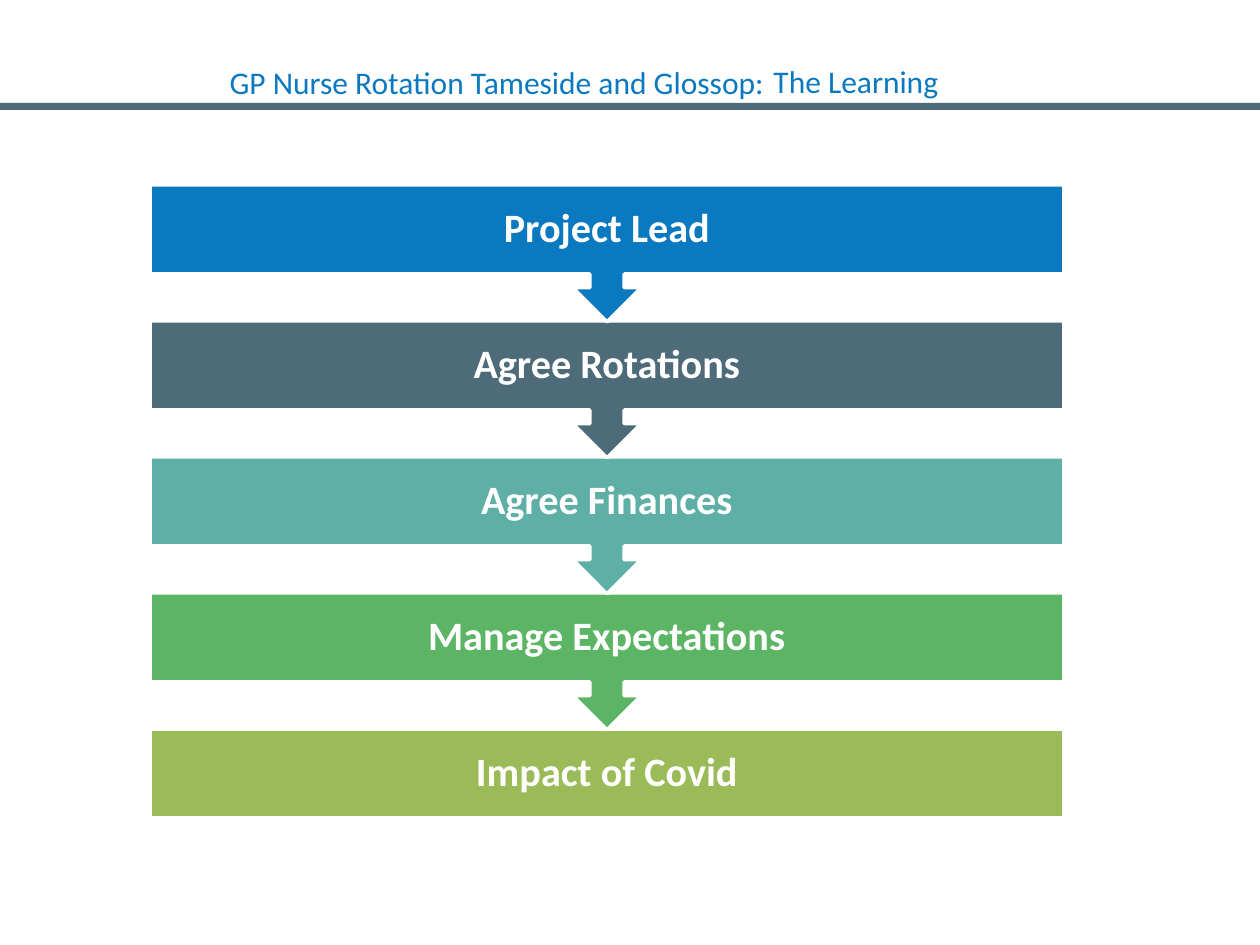
from dataclasses import dataclass

from pptx import Presentation
from pptx.dml.color import RGBColor
from pptx.enum.shapes import MSO_SHAPE
from pptx.enum.text import MSO_ANCHOR, PP_ALIGN
from pptx.shapes.autoshape import Shape
from pptx.slide import Slide
from pptx.text.text import TextFrame
from pptx.util import Emu, Pt

PX_PER_INCH = 126
TITLE_ONLY_LAYOUT = 5


@dataclass(frozen=True)
class Theme:
    font: str = "Calibri"
    blue: str = "0A79C0"
    slate: str = "4E6B79"
    teal: str = "5EAFA6"
    green: str = "5CB565"
    olive: str = "9BBB59"
    white: str = "FFFFFF"
    heading_size: int = 18
    step_size: int = 23
    outline: int = 2


@dataclass(frozen=True)
class Box:
    left: int
    top: int
    width: int
    height: int

    def emu(self) -> tuple[Emu, ...]:
        return tuple(px(n) for n in (self.left, self.top, self.width, self.height))


@dataclass(frozen=True)
class Step:
    label: str
    color: str


THEME = Theme()
STEPS = (
    Step("Project Lead", THEME.blue),
    Step("Agree Rotations", THEME.slate),
    Step("Agree Finances", THEME.teal),
    Step("Manage Expectations", THEME.green),
    Step("Impact of Covid", THEME.olive),
)
STEP_LEFT, STEP_TOP, STEP_WIDTH = 150, 185, 914
STEP_PITCH = 136
CALLOUT_HEIGHT, BAR_HEIGHT = 137, 89
STEP_INSET = 23


def px(length: int) -> Emu:
    return Emu(round(length * 914400 / PX_PER_INCH))


def write_text(frame: TextFrame, text: str, *, size: int, color: str,
               bold: bool = False, align: PP_ALIGN = PP_ALIGN.LEFT,
               anchor: MSO_ANCHOR = MSO_ANCHOR.TOP, wrap: bool = False,
               spacing: float = 1.0) -> None:
    frame.word_wrap = wrap
    frame.vertical_anchor = anchor
    para = frame.paragraphs[0]
    para.alignment = align
    para.line_spacing = spacing
    para.space_before = Pt(0)
    span = para.add_run()
    span.text = text
    span.font.name = THEME.font
    span.font.size = Pt(size)
    span.font.bold = bold
    span.font.color.rgb = RGBColor.from_string(color)


def add_filled_shape(page: Slide, kind: MSO_SHAPE, box: Box, color: str) -> Shape:
    shape = page.shapes.add_shape(kind, *box.emu())
    shape.shadow.inherit = False
    shape.fill.solid()
    shape.fill.fore_color.rgb = RGBColor.from_string(color)
    shape.line.fill.background()
    return shape


def add_heading(page: Slide) -> None:
    """Fill the title and put its second part beside it."""
    title = page.shapes.title
    title.left, title.top, title.width, title.height = Box(217, 57, 566, 51).emu()
    subject = page.shapes.add_textbox(*Box(761, 56, 193, 51).emu())
    for shape, text in (
        (title, "GP Nurse Rotation Tameside and Glossop:"),
        (subject, "The Learning"),
    ):
        write_text(shape.text_frame, text, size=THEME.heading_size, color=THEME.blue)


def add_step(page: Slide, index: int, step: Step) -> None:
    """Draw a bar that points down to the next one, unless it is the last."""
    is_last = index == len(STEPS) - 1
    kind = MSO_SHAPE.RECTANGLE if is_last else MSO_SHAPE.DOWN_ARROW_CALLOUT
    height = BAR_HEIGHT if is_last else CALLOUT_HEIGHT
    box = Box(STEP_LEFT, STEP_TOP + index * STEP_PITCH, STEP_WIDTH, height)
    bar = add_filled_shape(page, kind, box, step.color)
    bar.line.color.rgb = RGBColor.from_string(THEME.white)
    bar.line.width = Pt(THEME.outline)
    frame = bar.text_frame
    frame.margin_left = frame.margin_right = px(STEP_INSET)
    frame.margin_top = frame.margin_bottom = px(STEP_INSET)
    write_text(frame, step.label, size=THEME.step_size, color=THEME.white,
               bold=True, align=PP_ALIGN.CENTER, anchor=MSO_ANCHOR.MIDDLE,
               wrap=True, spacing=0.9)


def main() -> None:
    deck = Presentation()
    deck.slide_width, deck.slide_height = px(1260), px(945)
    page = deck.slides.add_slide(deck.slide_layouts[TITLE_ONLY_LAYOUT])
    add_filled_shape(page, MSO_SHAPE.RECTANGLE, Box(0, 103, 1260, 7), THEME.slate)
    add_heading(page)
    for index, step in reversed(list(enumerate(STEPS))):
        add_step(page, index, step)
    deck.save("out.pptx")


if __name__ == "__main__":
    main()
